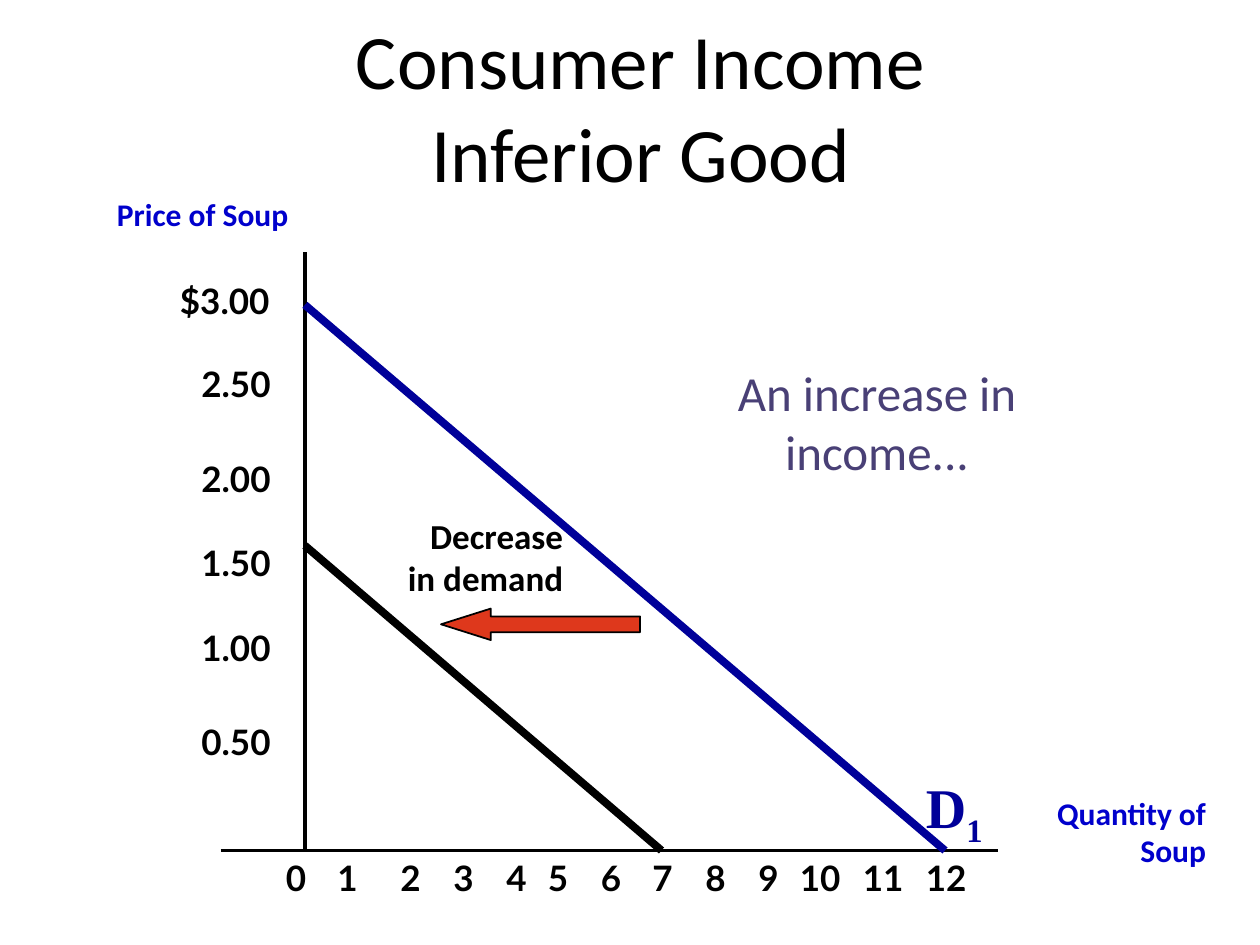
from lxml import etree
from pptx import Presentation
from pptx import util as u
from pptx.dml.color import RGBColor
from pptx.enum import shapes, text
from pptx.oxml.ns import qn

BLACK = RGBColor(0x00, 0x00, 0x00)
WHITE = RGBColor(0xFF, 0xFF, 0xFF)
NAVY = RGBColor(0x00, 0x00, 0x99)
BLUE = RGBColor(0x00, 0x00, 0xCC)
PURPLE = RGBColor(0x49, 0x40, 0x76)
RED = RGBColor(0xDE, 0x38, 0x1C)

PRICE_LABELS = [
    ("$3.00", -0.42, 0.17), ("2.50", -0.25, 0.83), ("2.00", -0.25, 1.58),
    ("1.50", -0.25, 2.25), ("1.00", -0.25, 2.92), ("0.50", -0.25, 3.67),
]
QUANTITY_OFFSETS = [0.42, 0.83, 1.33, 1.75, 2.17, 2.5, 2.92,
                    3.33, 3.75, 4.17, 4.5, 5, 5.5]


def format_text(shape, size, font_name, color, bold=True, align=text.PP_ALIGN.LEFT):
    for paragraph in shape.text_frame.paragraphs:
        paragraph.alignment = align
        for run in paragraph.runs:
            run.font.size = u.Pt(size)
            run.font.name = font_name
            run.font.bold = bold
            run.font.color.rgb = color


def add_label(slide, words, left, top, width, height, size, font_name, color,
              align=text.PP_ALIGN.LEFT):
    label = slide.shapes.add_textbox(
        u.Inches(left), u.Inches(top), u.Inches(width), u.Inches(height))
    label.text_frame.word_wrap = True
    label.text_frame.text = words
    format_text(label, size, font_name, color, align=align)
    return label


def add_line(slide, start, end, color, weight):
    line = slide.shapes.add_connector(
        shapes.MSO_CONNECTOR.STRAIGHT,
        u.Inches(start[0]), u.Inches(start[1]), u.Inches(end[0]), u.Inches(end[1]))
    line.line.color.rgb = color
    line.line.width = u.Pt(weight)
    etree.SubElement(line._element.spPr, qn("a:effectLst"))


def add_title(slide, left, top, width, height):
    title = slide.shapes.title
    title.left, title.top = u.Inches(left), u.Inches(top)
    title.width, title.height = u.Inches(width), u.Inches(height)
    title.text_frame.text = "Consumer Income\vInferior Good"
    title.text_frame.vertical_anchor = text.MSO_ANCHOR.MIDDLE
    format_text(title, 44, "Calibri", BLACK, False, text.PP_ALIGN.CENTER)


def add_axes(slide, left, top, width, height):
    bottom = top + height
    origin = left + 0.67
    add_line(slide, (origin, top), (origin, bottom), BLACK, 2.25)
    add_line(slide, (left, bottom), (left + width, bottom), BLACK, 2.25)
    for words, offset, drop in PRICE_LABELS:
        add_label(slide, words, left + offset, top + drop,
                  0.75 - offset - 0.17, 0.43, 20, "Lato", BLACK)
    for quantity, offset in enumerate(QUANTITY_OFFSETS):
        add_label(slide, str(quantity), left + offset, bottom,
                  0.58, 0.43, 20, "Lato", BLACK)
    add_label(slide, "Price of Soup", left - 0.92, top - 0.5,
              2.17, 0.4, 18, "Calibri", BLUE)
    add_label(slide, "Quantity of Soup", left + width + 0.08, bottom - 0.5,
              1.67, 0.7, 18, "Calibri", BLUE, text.PP_ALIGN.RIGHT)


def add_demand_curves(slide, left, top, width, height):
    bottom = top + height
    add_line(slide, (left, top), (left + width, bottom), NAVY, 4.5)
    add_line(slide, (left, top + 1.91), (left + 2.83, bottom), BLACK, 4.5)
    curve_name = add_label(slide, "D", left + 4.83, bottom - 0.67,
                           0.83, 0.63, 32, "Times New Roman", NAVY)
    subscript = curve_name.text_frame.paragraphs[0].add_run()
    subscript.text = "1"
    format_text(curve_name, 32, "Times New Roman", NAVY)
    subscript._r.get_or_add_rPr().set("baseline", "-25000")


def add_shift(slide, left, top, width, height):
    label = add_label(slide, "Decrease\nin demand", left, top, 1.39, 0.67,
                      20, "Calibri", BLACK, text.PP_ALIGN.RIGHT)
    frame = label.text_frame
    frame.word_wrap = False
    frame.margin_left = frame.margin_right = 0
    frame.margin_top = frame.margin_bottom = 0
    arrow = slide.shapes.add_shape(
        shapes.MSO_SHAPE.LEFT_ARROW, u.Inches(left + 0.42), u.Inches(top + height - 0.25),
        u.Inches(width - 0.42), u.Inches(0.25))
    arrow.adjustments[0] = 0.5
    arrow.adjustments[1] = 1.58
    arrow.shadow.inherit = False
    arrow.fill.solid()
    arrow.fill.fore_color.rgb = RED
    arrow.line.color.rgb = BLACK
    arrow.line.width = u.Pt(1)


def add_cause(slide, left, top, width, height):
    cause = slide.shapes.add_shape(
        shapes.MSO_SHAPE.RECTANGLE, u.Inches(left), u.Inches(top),
        u.Inches(width), u.Inches(height))
    cause.shadow.inherit = False
    cause.fill.solid()
    cause.fill.fore_color.rgb = WHITE
    cause.line.fill.background()
    cause.text_frame.word_wrap = True
    cause.text_frame.vertical_anchor = text.MSO_ANCHOR.TOP
    cause.text_frame.text = "An increase in income..."
    format_text(cause, 28, "Calibri", PURPLE, False, text.PP_ALIGN.CENTER)


def main():
    presentation = Presentation()
    presentation.slide_width = u.Inches(10)
    presentation.slide_height = u.Inches(7.5)
    slide = presentation.slides.add_slide(presentation.slide_layouts[5])
    add_title(slide, 0.5, 0.17, 9.17, 1.33)
    add_axes(slide, 1.75, 2, 6.17, 4.75)
    add_demand_curves(slide, 2.42, 2.42, 5.08, 4.33)
    add_shift(slide, 3.08, 4.08, 2, 1)
    add_cause(slide, 5.67, 2.83, 2.58, 1.03)
    presentation.save("out.pptx")


if __name__ == "__main__":
    main()
